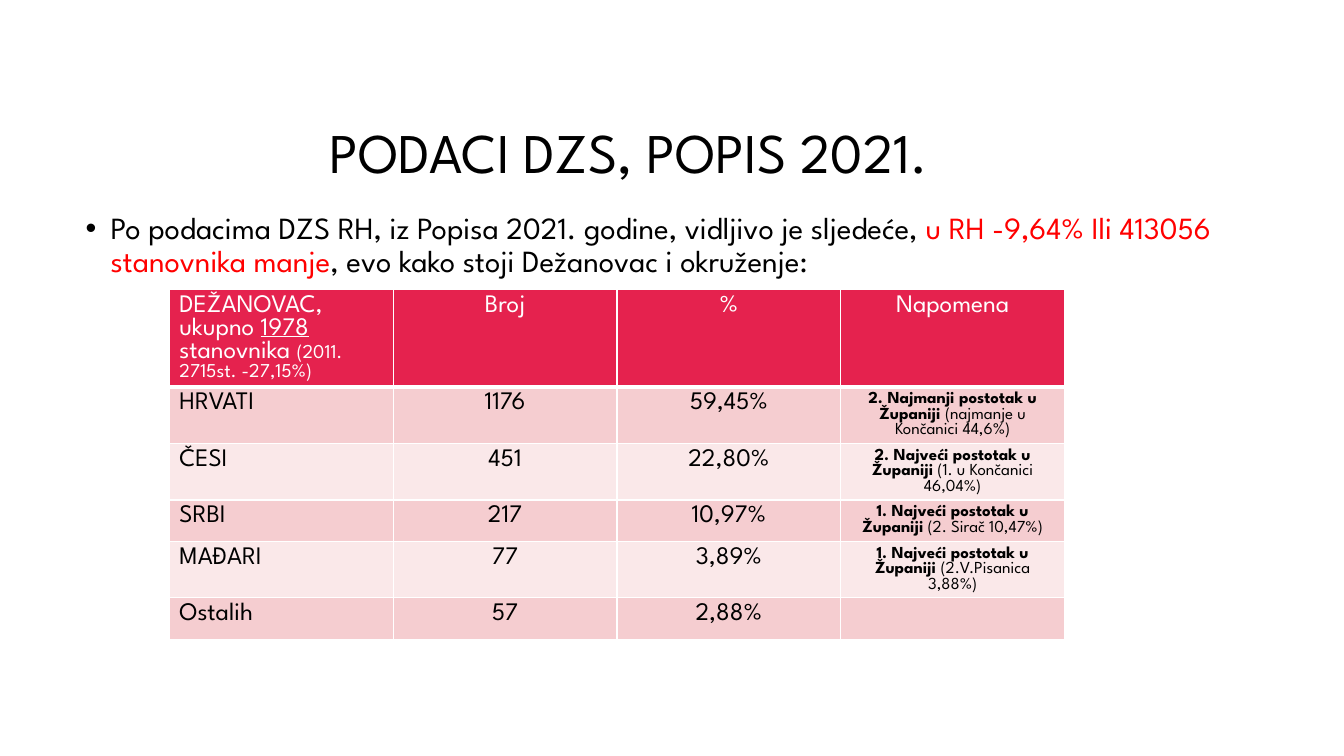
from dataclasses import dataclass
from typing import Any

from lxml.etree import SubElement
from pptx import Presentation
from pptx.dml.color import RGBColor
from pptx.enum.text import MSO_ANCHOR, MSO_AUTO_SIZE, PP_ALIGN
from pptx.oxml.ns import qn
from pptx.util import Inches, Pt

HUES = {"ink": "000000", "white": "FFFFFF", "alert": "FF0000",
        "head": "E5224E", "odd": "F5CDD0", "even": "FAE8E9"}
FACE = "League Spartan"


@dataclass
class Run:
    text: str
    size: int = 18
    hue: str = "ink"
    bold: bool = False
    line: bool = False


@dataclass
class Group:
    name: str
    count: str
    share: str
    lead: str = ""
    rest: str = ""


HEADS = [
    [Run("DEŽANOVAC, ukupno ", hue="white"), Run("1978", hue="white", line=True),
     Run(" stanovnika ", hue="white"), Run("(2011. 2715st. -27,15%)", 14, "white")],
    *([Run(text, hue="white")] for text in ("Broj", "%", "Napomena")),
]
GROUPS = [
    Group("HRVATI", "1176", "59,45%", "2. Najmanji postotak u Županiji ",
          "(najmanje u Končanici 44,6%)"),
    Group("ČESI", "451", "22,80%", "2. Najveći postotak u Županiji",
          " (1. u Končanici 46,04%)"),
    Group("SRBI", "217", "10,97%", "1. Najveći postotak u Županiji",
          " (2. Sirač 10,47%)"),
    Group("MAĐARI", "77", "3,89%", "1. Najveći postotak u Županiji ",
          "(2.V.Pisanica 3,88%)"),
    Group("Ostalih", "57", "2,88%"),
]
INTRO = [
    Run("Po podacima DZS RH, iz Popisa 2021. godine, vidljivo je sljedeće, ", 22),
    Run("u RH -9,64% Ili 413056 stanovnika manje", 22, "alert"),
    Run(", evo kako stoji Dežanovac i okruženje:", 22),
]


def apply(item: Any, form: dict[str, Any]) -> None:
    """Set each attribute named in the format."""
    for key, value in form.items():
        setattr(item, key, value)


def color(name: str) -> RGBColor:
    """Look up a named colour."""
    return RGBColor.from_string(HUES[name])


def write(para: Any, runs: list[Run], form: dict[str, Any]) -> None:
    """Format a paragraph and add its runs."""
    apply(para, form)
    for part in runs:
        run = para.add_run()
        run.text = part.text
        apply(run.font, {"name": FACE, "size": Pt(part.size),
                         "bold": part.bold, "underline": part.line})
        run.font.color.rgb = color(part.hue)


def place(shape: Any, box: tuple[float, ...], form: dict[str, Any]) -> None:
    """Position a text shape and format its frame."""
    apply(shape, dict(zip(("left", "top", "width", "height"), map(Inches, box))))
    apply(shape.text_frame, {"word_wrap": True, "auto_size": MSO_AUTO_SIZE.NONE, **form})


def paint(cell: Any, hue: str, base: int) -> None:
    """Give a cell white borders and a fill."""
    props = cell._tc.get_or_add_tcPr()
    for side, width in {"lnL": 1, "lnR": 1, "lnT": 1, "lnB": base}.items():
        line = SubElement(props, qn(f"a:{side}"), w=str(Pt(width)))
        fill = SubElement(line, qn("a:solidFill"))
        SubElement(fill, qn("a:srgbClr"), val=HUES["white"])
    cell.fill.solid()
    cell.fill.fore_color.rgb = color(hue)


def cells(group: Group) -> list[list[Run]]:
    """Turn a group into the runs of its four cells."""
    note = [Run(group.lead, 12, bold=True), Run(group.rest, 12)] if group.lead else []
    return [[Run(group.name)], [Run(group.count)], [Run(group.share)], note]


def chart(slide: Any) -> None:
    """Build the census table."""
    rows = [HEADS, *map(cells, GROUPS)]
    table = slide.shapes.add_table(len(rows), len(HEADS), Inches(1.68), Inches(2.87),
                                   Inches(8.88), Inches(0.41 * len(rows))).table
    for r, row in enumerate(rows):
        hue = "head" if r == 0 else ("even", "odd")[r % 2]
        for c, runs in enumerate(row):
            cell = table.cell(r, c)
            paint(cell, hue, 3 if r == 0 else 1)
            side = PP_ALIGN.CENTER if c else PP_ALIGN.LEFT
            write(cell.text_frame.paragraphs[0], runs, {"alignment": side})


def main() -> None:
    """Build and save the slide."""
    deck = Presentation()
    apply(deck, {"slide_width": Inches(13.33), "slide_height": Inches(7.5)})
    slide = deck.slides.add_slide(deck.slide_layouts[5])
    form = {"alignment": PP_ALIGN.LEFT, "line_spacing": 0.9, "space_before": Pt(0)}

    title = slide.shapes.title
    place(title, (3.17, 0.84, 9.42, 1.41), {"vertical_anchor": MSO_ANCHOR.MIDDLE})
    write(title.text_frame.paragraphs[0], [Run("PODACI DZS, POPIS 2021.", 40)], form)

    box = (0.75, 2.06, 11.83, 4.75)
    body = slide.shapes.add_textbox(*map(Inches, box))
    place(body, box, {"vertical_anchor": MSO_ANCHOR.TOP})
    para = body.text_frame.paragraphs[0]
    props = para._p.get_or_add_pPr()
    props.set("marL", str(Inches(0.25)))
    props.set("indent", str(Inches(-0.25)))
    SubElement(props, qn("a:buFont"), typeface="Arial")
    SubElement(props, qn("a:buChar"), char="•")
    write(para, INTRO, form)

    chart(slide)
    deck.save("out.pptx")


if __name__ == "__main__":
    main()
